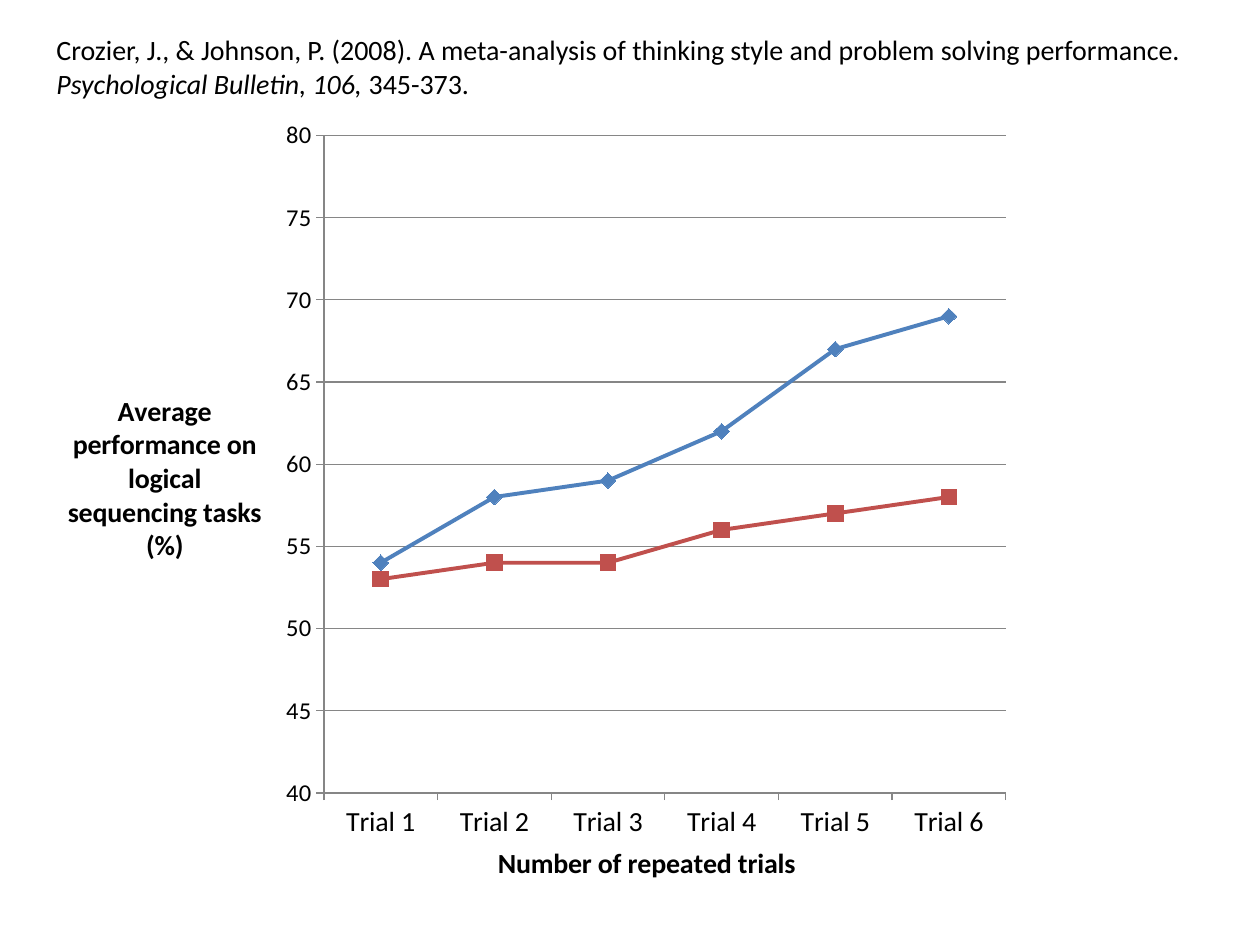
import pptx
import pptx.chart.data
import pptx.dml.color
import pptx.enum.chart
import pptx.enum.text
import pptx.oxml
import pptx.oxml.ns
import pptx.util
from pptx.util import Inches

FONT = "Calibri"
BLACK = pptx.dml.color.RGBColor(0x00, 0x00, 0x00)
GRAY = pptx.dml.color.RGBColor(0x86, 0x86, 0x86)
BLUE = pptx.dml.color.RGBColor(0x4F, 0x81, 0xBD)
RED = pptx.dml.color.RGBColor(0xC0, 0x50, 0x4D)

MARKERS = pptx.enum.chart.XL_MARKER_STYLE
SERIES = [
    ("Series 1", (54, 58, 59, 62, 67, 69), BLUE, MARKERS.DIAMOND),
    ("Series 2", (53, 54, 54, 56, 57, 58), RED, MARKERS.SQUARE),
]
CITATION = [
    ("Crozier, J., & Johnson, P. (2008). A meta-analysis of thinking style "
     "and problem solving performance. ", False),
    ("Psychological Bulletin, 106, ", True),
    ("345-373.", False),
]


def style_font(font, size, bold=False):
    font.name = FONT
    font.size = pptx.util.Pt(size)
    font.bold = bold
    font.color.rgb = BLACK


def set_layout(parent, target=None, **fractions):
    """Place a chart part by fractions of the chart's size."""
    qn = pptx.oxml.ns.qn
    for old in parent.findall(qn("c:layout")):
        parent.remove(old)
    parts = [("layoutTarget", target)] if target else []
    parts += [("xMode", "edge"), ("yMode", "edge"), *fractions.items()]
    body = "".join(f'<c:{tag} val="{value}"/>' for tag, value in parts)
    layout = pptx.oxml.parse_xml(
        f'<c:layout {pptx.oxml.ns.nsdecls("c")}>'
        f"<c:manualLayout>{body}</c:manualLayout></c:layout>")
    parent.insert(0 if parent.find(qn("c:tx")) is None else 1, layout)


def style_axis(axis, title, label_size, x, y):
    axis.major_tick_mark = pptx.enum.chart.XL_TICK_MARK.OUTSIDE
    axis.minor_tick_mark = pptx.enum.chart.XL_TICK_MARK.NONE
    axis.format.line.color.rgb = GRAY
    style_font(axis.tick_labels.font, label_size)

    # Horizontal axis title
    frame = axis.axis_title.text_frame
    frame.text = title
    style_font(frame.paragraphs[0].runs[0].font, 16, bold=True)
    title_xml = axis._element.find(pptx.oxml.ns.qn("c:title"))
    body = title_xml.find(".//" + pptx.oxml.ns.qn("a:bodyPr"))
    body.set("rot", "0")
    body.set("vert", "horz")
    set_layout(title_xml, x=x, y=y)


def add_trials_chart(slide):
    data = pptx.chart.data.CategoryChartData()
    data.categories = [f"Trial {number}" for number in range(1, 7)]
    for name, values, _, _ in SERIES:
        data.add_series(name, values)
    chart = slide.shapes.add_chart(
        pptx.enum.chart.XL_CHART_TYPE.LINE_MARKERS,
        Inches(0.43), Inches(0.52), Inches(8.43), Inches(6.54), data).chart
    chart.has_title = False
    chart.has_legend = False
    style_font(chart.font, 10)
    chart.plots[0].vary_by_categories = False
    plot_area = chart._chartSpace.find(".//" + pptx.oxml.ns.qn("c:plotArea"))
    set_layout(plot_area, "inner", x=0.254, y=0.086, w=0.642, h=0.808)

    # Axes
    style_axis(chart.category_axis, "Number of repeated trials",
               16, 0.413, 0.951)
    performance_axis = chart.value_axis
    style_axis(performance_axis,
               "Average performance on logical sequencing tasks (%)",
               14, 0.008, 0.395)
    performance_axis.minimum_scale = 40
    performance_axis.maximum_scale = 80
    performance_axis.major_unit = 5
    performance_axis.has_major_gridlines = True
    performance_axis.major_gridlines.format.line.color.rgb = GRAY
    performance_axis.tick_labels.number_format = "General"
    performance_axis.tick_labels.number_format_is_linked = False

    # Lines and markers
    for series, (_, _, color, marker) in zip(chart.plots[0].series, SERIES):
        series.smooth = False
        series.format.line.color.rgb = color
        series.format.line.width = pptx.util.Pt(2.25)
        series.marker.style = marker
        series.marker.size = 9
        series.marker.format.fill.solid()
        series.marker.format.fill.fore_color.rgb = color
        series.marker.format.line.color.rgb = color


def add_citation(slide):
    frame = slide.shapes.add_textbox(
        Inches(0.35), Inches(0.21), Inches(9.53), Inches(0.64)).text_frame
    frame.word_wrap = True
    frame.auto_size = pptx.enum.text.MSO_AUTO_SIZE.SHAPE_TO_FIT_TEXT
    for text, italic in CITATION:
        run = frame.paragraphs[0].add_run()
        run.text = text
        style_font(run.font, 16)
        run.font.italic = italic


def main():
    deck = pptx.Presentation()
    deck.slide_width = Inches(10)
    deck.slide_height = Inches(7.5)
    slide = deck.slides.add_slide(deck.slide_layouts[6])
    add_trials_chart(slide)
    add_citation(slide)
    deck.save("out.pptx")


if __name__ == "__main__":
    main()
